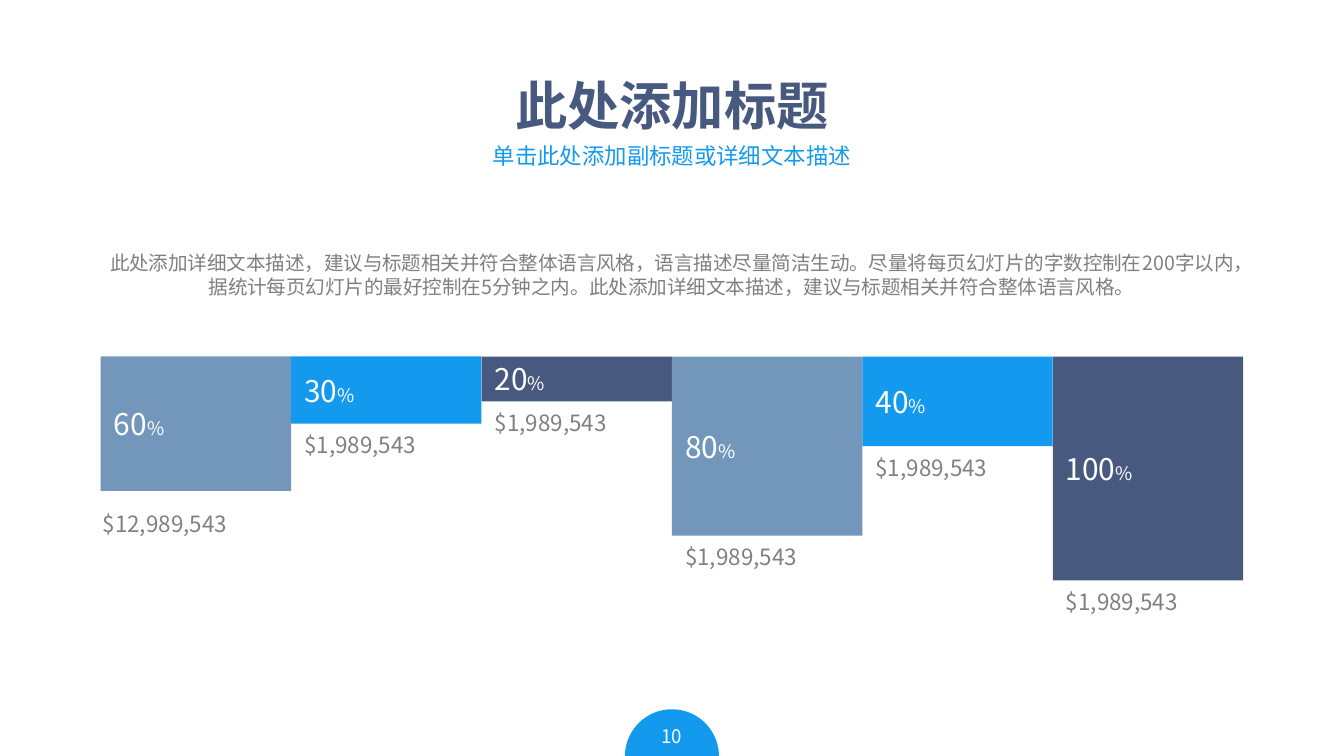
from pptx import Presentation
from pptx.dml.color import RGBColor
from pptx.enum.shapes import MSO_SHAPE as Shape
from pptx.enum.text import MSO_ANCHOR as Anchor, PP_ALIGN as Align
from pptx.oxml.ns import qn
from pptx.util import Pt

TITLE = "此处添加标题"
SUBTITLE = "单击此处添加副标题或详细文本描述"
DESCRIPTION = (
    "此处添加详细文本描述，建议与标题相关并符合整体语言风格，语言描述尽量简洁生动。"
    "尽量将每页幻灯片的字数控制在200字以内，据统计每页幻灯片的最好控制在5分钟之内。"
    "此处添加详细文本描述，建议与标题相关并符合整体语言风格。"
)
PAGE_NUMBER = "10"
# percent, colour, amount, label offset (x, y) from the bar's lower left corner
BARS = [
    (60, "steel", "$12,989,543", (-6, 6)),
    (30, "blue", "$1,989,543", (0, 0)),
    (20, "navy", "$1,989,543", (0, 0)),
    (80, "steel", "$1,989,543", (0, 0)),
    (40, "blue", "$1,989,543", (0, 0)),
    (100, "navy", "$1,989,543", (0, 0)),
]
COLORS = {
    "steel": "7397BB", "blue": "1399EE", "navy": "48597F",
    "white": "FFFFFF", "body": "7F7F7F", "amount": "808080",
}
FONT = "Noto Sans CJK SC"
BAR_LEFT, BAR_TOP, BAR_WIDTH = 54, 191, 102
POINTS_PER_PERCENT = 1.2

prs = Presentation()
prs.slide_width, prs.slide_height = Pt(720), Pt(405)
slide = prs.slides.add_slide(prs.slide_layouts[6])


def write(holder, runs, color, align=Align.LEFT, anchor=Anchor.TOP,
          spacing=None, bold=False):
    """Fill a shape with one paragraph of (text, size) runs."""
    frame = holder.text_frame
    frame.word_wrap = True
    frame.vertical_anchor = anchor
    paragraph = frame.paragraphs[0]
    paragraph.alignment = align
    if spacing:
        paragraph.line_spacing = Pt(spacing)
    for text, size in runs:
        run = paragraph.add_run()
        run.text = text
        run.font.size = Pt(size)
        run.font.bold = bold
        run.font.name = FONT
        run.font.color.rgb = RGBColor.from_string(COLORS[color])
        east_asian = run.font._element.makeelement(qn("a:ea"), {"typeface": FONT})
        run.font._element.find(qn("a:latin")).addnext(east_asian)


def add_text(box, *args, **kwargs):
    write(slide.shapes.add_textbox(*map(Pt, box)), *args, **kwargs)


def add_filled(kind, box, color):
    shape = slide.shapes.add_shape(kind, *map(Pt, box))
    shape.shadow.inherit = False
    shape.fill.solid()
    shape.fill.fore_color.rgb = RGBColor.from_string(COLORS[color])
    shape.line.fill.background()
    return shape


# Page number on a half disc: angles are 60000ths of a degree over 100000
half_disc = add_filled(Shape.PIE, (334.8, 380, 50.4, 50.4), "blue")
half_disc.adjustments[0] = 180 * 0.6
half_disc.adjustments[1] = 0
add_text((345, 383.3, 30, 21.6), [(PAGE_NUMBER, 10)], "white",
         Align.CENTER, Anchor.MIDDLE)

# Headings and description
add_text((36, 22.5, 648, 67.5), [(TITLE, 28)], "navy",
         Align.CENTER, Anchor.MIDDLE, bold=True)
add_text((162, 69, 396, 25), [(SUBTITLE, 12)], "blue", Align.CENTER, spacing=18.2)
add_text((48, 130.3, 624, 48), [(DESCRIPTION, 10.5)], "body",
         Align.CENTER, spacing=13)

# Hanging bars with the amount below each
for index, (percent, color, amount, (shift_x, shift_y)) in enumerate(BARS):
    left = BAR_LEFT + index * BAR_WIDTH
    height = percent * POINTS_PER_PERCENT
    bar = add_filled(Shape.RECTANGLE, (left, BAR_TOP, BAR_WIDTH, height), color)
    write(bar, [(str(percent), 16), ("%", 10)], "white", anchor=Anchor.MIDDLE)
    add_text((left + shift_x, BAR_TOP + height + shift_y, 114, 26),
             [(amount, 12)], "amount", spacing=15)

prs.save("out.pptx")
